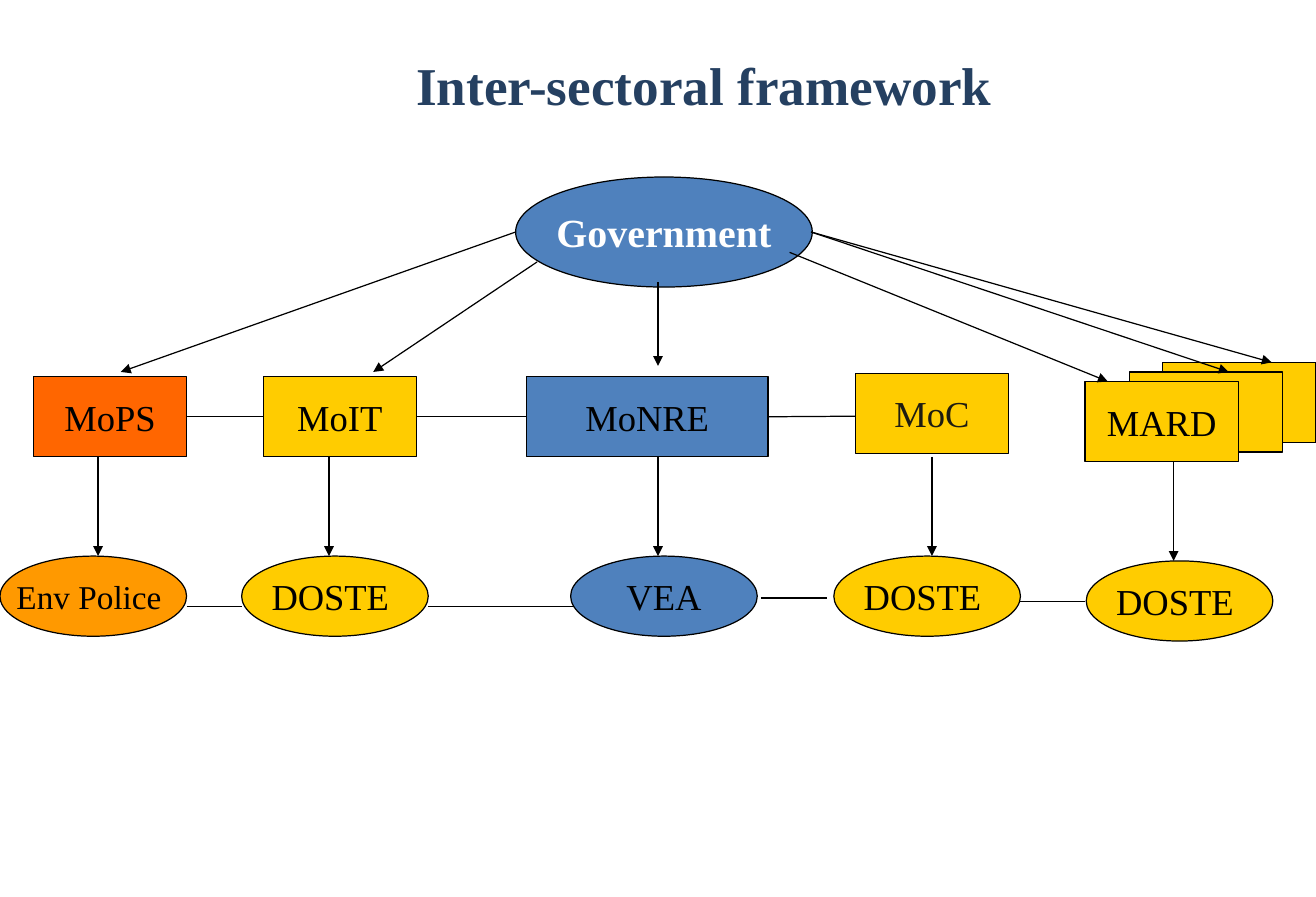
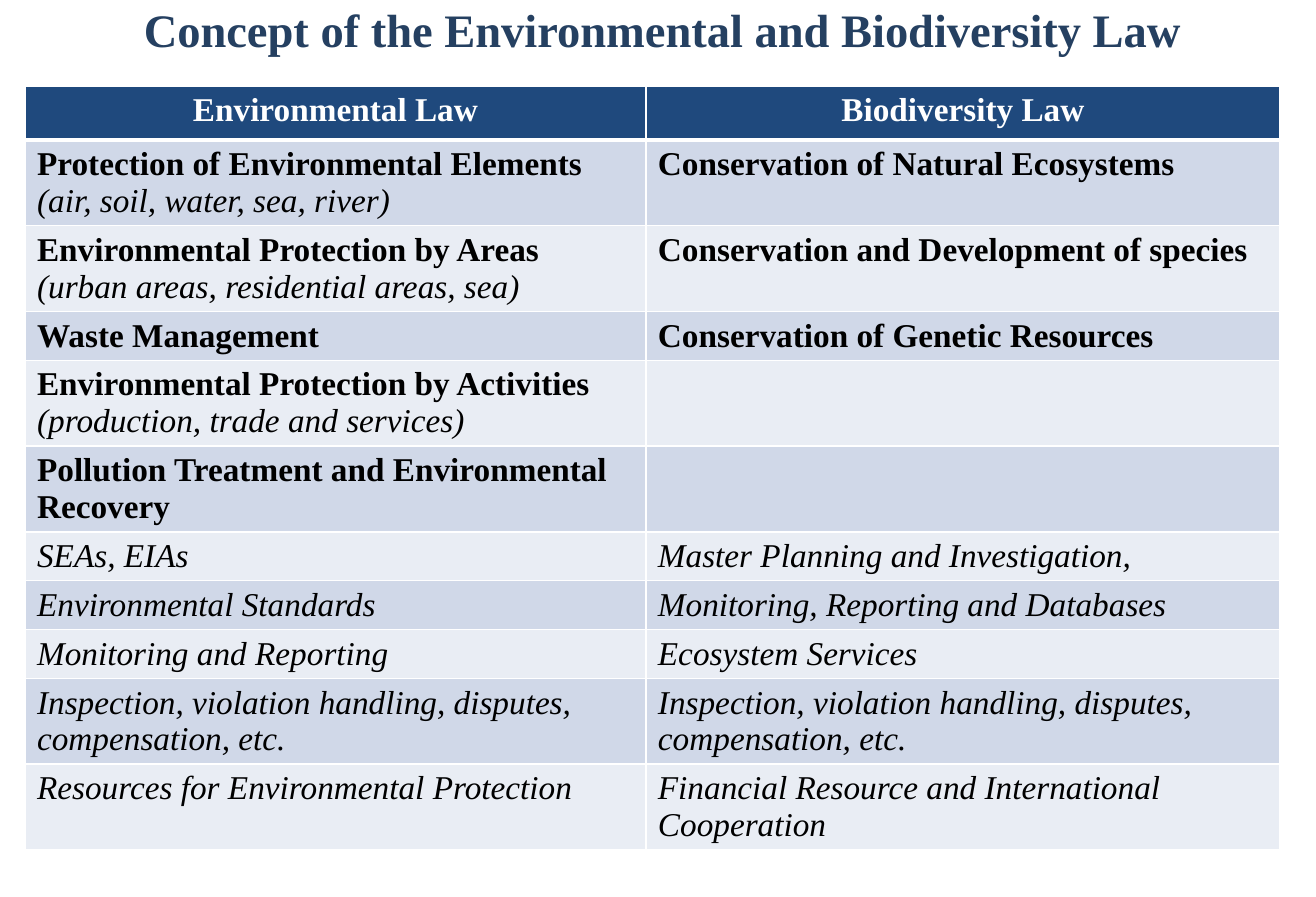
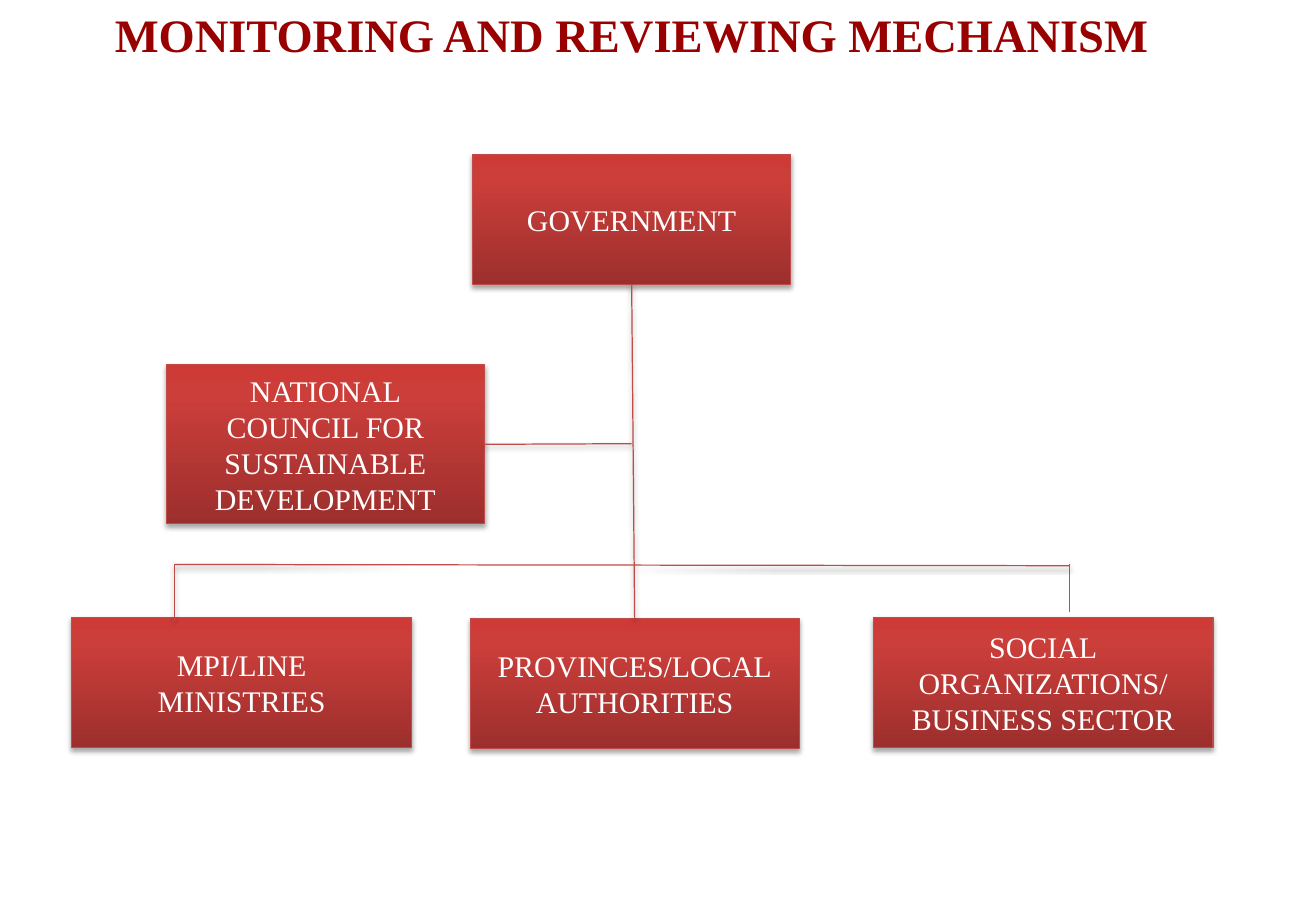
import copy
import dataclasses

import lxml.etree
import pptx
import pptx.dml.color
import pptx.enum.dml
import pptx.enum.shapes
import pptx.enum.text
import pptx.oxml.ns
import pptx.util

Inches = pptx.util.Inches
Pt = pptx.util.Pt
qn = pptx.oxml.ns.qn
Shapes = pptx.enum.shapes.MSO_SHAPE
Anchor = pptx.enum.text.MSO_ANCHOR
Align = pptx.enum.text.PP_ALIGN


@dataclasses.dataclass(frozen=True)
class Theme:
    font: str = "Times New Roman"
    black: str = "000000"
    white: str = "FFFFFF"
    navy: str = "254061"
    header: str = "1F497D"
    blue: str = "4F81BD"
    yellow: str = "FFCC00"
    amber: str = "FF9900"
    orange: str = "FF6600"
    umber: str = "1E1C11"
    maroon: str = "990000"
    red_line: str = "BF4C48"
    red_fill: tuple = ((0, "9C2F2D"), (0.8, "CB3E3A"), (1, "CE3B37"))
    bands: tuple = ("D0D8E8", "E9EDF4")
    big_title: int = 32
    title: int = 28
    root: int = 24
    node: int = 22
    cell: int = 20
    chart: int = 18
    line: float = 0.75


THEME = Theme()
RECT, OVAL = Shapes.RECTANGLE, Shapes.OVAL

MINISTRY, AGENCY = (1.28, 0.67), (1.56, 0.67)
FRAMEWORK_NODES = [
    ("Government", OVAL, (4.31, 1.48), (2.48, 0.92), THEME.blue),
    ("MoPS", RECT, (0.28, 3.15), MINISTRY, THEME.orange),
    ("MoIT", RECT, (2.2, 3.15), MINISTRY, THEME.yellow),
    ("MoNRE", RECT, (4.4, 3.15), (2.02, 0.67), THEME.blue),
    ("MoC", RECT, (7.15, 3.12), MINISTRY, THEME.yellow),
    ("", RECT, (9.72, 3.03), MINISTRY, THEME.yellow),
    ("", RECT, (9.44, 3.11), MINISTRY, THEME.yellow),
    ("MARD", RECT, (9.07, 3.19), MINISTRY, THEME.yellow),
    ("Env Police ", OVAL, (0, 4.65), AGENCY, THEME.amber),
    ("DOSTE ", OVAL, (2.02, 4.65), AGENCY, THEME.yellow),
    ("VEA", OVAL, (4.77, 4.65), AGENCY, THEME.blue),
    ("DOSTE ", OVAL, (6.97, 4.65), AGENCY, THEME.yellow),
    ("DOSTE ", OVAL, (9.08, 4.69), AGENCY, THEME.yellow),
]
NODE_STYLES = {
    "Government": (THEME.root, THEME.white, True),
    "Env Police ": (THEME.cell, THEME.black, False),
    "MoC": (THEME.node, THEME.umber, False),
}
GOVERNMENT_ARROWS = [
    ((4.31, 1.94), (1.01, 3.11)),
    ((4.49, 2.19), (3.12, 3.11)),
    ((5.5, 2.36), (5.5, 3.06)),
    ((6.6, 2.11), (9.26, 3.19)),
    ((6.78, 1.94), (10.27, 3.11)),
    ((6.78, 1.94), (10.63, 3.03)),
]
AGENCY_ARROWS = [(0.82, 3.82), (2.75, 3.82), (5.5, 3.82), (7.79, 3.82), (9.81, 3.86)]
AGENCY_DROP = 0.83
MINISTRY_LINKS = [("MoPS", "MoIT"), ("MoIT", "MoNRE"), ("MoNRE", None)]
MOC_SIDE = (7.15, 3.48)
AGENCY_LINKS = [(1.56, 2.02, 5.07), (3.58, 4.79, 5.07), (6.36, 6.91, 5), (8.53, 9.07, 5.03)]

BOLD, ITALIC = "bold", "italic"
LAW_HEADERS = ["Environmental Law", "Biodiversity Law"]
LAW_TOPICS = [
    ([[("Protection of Environmental Elements ", BOLD), ("(air, soil, water, sea, river)", ITALIC)]],
     [[("Conservation of Natural Ecosystems", BOLD)]]),
    ([[("Environmental Protection by Areas ", BOLD), ("(urban areas, residential areas, sea)", ITALIC)]],
     [[("Conservation and Development of species", BOLD)]]),
    ([[("Waste Management", BOLD)]],
     [[("Conservation of Genetic Resources", BOLD)]]),
    ([[("Environmental Protection by Activities", BOLD)], [("(production, trade and services)", ITALIC)]],
     []),
    ([[("Pollution Treatment and Environmental", BOLD)], [("Recovery", BOLD)]],
     []),
    ([[("SEAs, EIAs", ITALIC)]],
     [[("Master Planning and Investigation,", ITALIC)]]),
    ([[("Environmental Standards", ITALIC)]],
     [[("Monitoring, Reporting and Databases", ITALIC)]]),
    ([[("Monitoring and Reporting", ITALIC)]],
     [[("Ecosystem Services", ITALIC)]]),
    ([[("Inspection, violation handling, disputes, compensation, etc.", ITALIC)]],
     [[("Inspection, violation handling, disputes,", ITALIC)], [("compensation, etc.", ITALIC)]]),
    ([[("Resources for Environmental Protection", ITALIC)]],
     [[("Financial Resource and International", ITALIC)], [("Cooperation", ITALIC)]]),
]
LAW_COLUMNS = [5.19, 5.3]
HEADER_ROW, ONE_LINE, TWO_LINES = 0.45, 0.4, 0.69
ONE_LINE_TOPICS = (2, 5, 6, 7)

MECHANISM_BOXES = {
    "government": (["GOVERNMENT"], (3.95, 1.29), (2.66, 1.09)),
    "council": (["NATIONAL", "COUNCIL FOR", "SUSTAINABLE", "DEVELOPMENT"], (1.39, 3.05), (2.66, 1.33)),
    "ministries": (["MPI/LINE", "MINISTRIES"], (0.6, 5.16), (2.84, 1.09)),
    "provinces": (["PROVINCES/LOCAL", "AUTHORITIES"], (3.93, 5.17), (2.75, 1.09)),
    "society": (["SOCIAL", "ORGANIZATIONS/", "BUSINESS SECTOR"], (7.3, 5.16), (2.84, 1.09)),
}
MECHANISM_LINES = [
    ((5.29, 2.38), (5.31, 5.17), ("government", 2), ("provinces", 0), True),
    ((1.46, 4.72), (8.94, 4.73), None, None, True),
    ((1.46, 4.72), (1.46, 5.19), None, None, True),
    ((8.94, 4.72), (8.94, 5.12), None, None, False),
    ((4.07, 3.71), (5.28, 3.71), ("council", 3), None, True),
]


def rgb(code):
    return pptx.dml.color.RGBColor.from_string(code)


def add_span(para, text, size, colour, bold=False, italic=False):
    span = para.add_run()
    span.text = text
    font = span.font
    font.name, font.size = THEME.font, Pt(size)
    font.bold, font.italic = bold, italic
    font.color.rgb = rgb(colour)


def add_page(deck, title, place, size, colour, anchor):
    page = deck.slides.add_slide(deck.slide_layouts[5])
    box = page.shapes.title
    box.left, box.top, box.width, box.height = map(Inches, place)
    frame = box.text_frame
    frame.auto_size = pptx.enum.text.MSO_AUTO_SIZE.NONE
    frame.vertical_anchor = anchor
    para = frame.paragraphs[0]
    para.alignment = Align.CENTER
    add_span(para, title, size, colour, bold=True)
    return page


def add_shadow(properties):
    effects = properties.find(qn("a:effectLst"))
    shadow = lxml.etree.SubElement(effects, qn("a:outerShdw"), blurRad=str(Pt(3.1)),
                                   dist=str(Pt(1.8)), dir="5400000", rotWithShape="0")
    colour = lxml.etree.SubElement(shadow, qn("a:srgbClr"), val=THEME.black)
    lxml.etree.SubElement(colour, qn("a:alpha"), val="35000")


def add_box(page, kind, corner, size, line_colour, wrap):
    box = page.shapes.add_shape(kind, *map(Inches, corner + size))
    box.shadow.inherit = False
    box.line.color.rgb = rgb(line_colour)
    box.line.width = Pt(THEME.line)
    frame = box.text_frame
    frame.word_wrap = wrap
    frame.vertical_anchor = Anchor.MIDDLE
    frame.paragraphs[0].alignment = Align.CENTER
    return box


def add_line(page, start, end, colour=THEME.black, arrow=False, shadow=False, begin=None, finish=None):
    line = page.shapes.add_connector(pptx.enum.shapes.MSO_CONNECTOR.STRAIGHT, *map(Inches, start + end))
    line.line.color.rgb = rgb(colour)
    line.line.width = Pt(THEME.line)
    properties = line._element.spPr
    lxml.etree.SubElement(properties, qn("a:effectLst"))
    if arrow:
        lxml.etree.SubElement(properties.find(qn("a:ln")), qn("a:tailEnd"), type="triangle")
    if shadow:
        add_shadow(properties)
    if begin:
        line.begin_connect(*begin)
    if finish:
        line.end_connect(*finish)


def build_framework(deck):
    page = add_page(deck, "Inter-sectoral framework", (3.18, 0.39, 5.41, 0.64),
                    THEME.big_title, THEME.navy, Anchor.TOP)
    nodes = {}
    for name, kind, corner, size, fill in FRAMEWORK_NODES:
        box = add_box(page, kind, corner, size, THEME.black, False)
        box.fill.solid()
        box.fill.fore_color.rgb = rgb(fill)
        if name:
            style = NODE_STYLES.get(name, (THEME.node, THEME.black, False))
            add_span(box.text_frame.paragraphs[0], name, *style)
        nodes[name] = box
    for start, end in GOVERNMENT_ARROWS:
        add_line(page, start, end, arrow=True)
    for x, y in AGENCY_ARROWS:
        add_line(page, (x, y), (x, y + AGENCY_DROP), arrow=True)
    for left, right in MINISTRY_LINKS:
        add_line(page, MOC_SIDE, MOC_SIDE, begin=(nodes[left], 3),
                 finish=(nodes[right], 1) if right else None)
    for left, right, y in AGENCY_LINKS:
        add_line(page, (left, y), (right, y))


def style_cell(cell, row, fill):
    properties = cell._tc.get_or_add_tcPr()
    widths = {"lnL": 1, "lnR": 1, "lnT": 3 if row == 1 else 1, "lnB": 3 if row == 0 else 1}
    for side, width in widths.items():
        border = lxml.etree.SubElement(properties, qn("a:" + side), w=str(Pt(width)))
        paint = lxml.etree.SubElement(border, qn("a:solidFill"))
        lxml.etree.SubElement(paint, qn("a:srgbClr"), val=THEME.white)
    cell.fill.solid()
    cell.fill.fore_color.rgb = rgb(fill)


def build_laws(deck):
    page = add_page(deck, "Concept of the Environmental and Biodiversity Law", (0.48, 0, 10.11, 0.48),
                    THEME.title, THEME.navy, Anchor.MIDDLE)
    heights = [HEADER_ROW] + [ONE_LINE if topic in ONE_LINE_TOPICS else TWO_LINES
                              for topic in range(len(LAW_TOPICS))]
    table = page.shapes.add_table(len(heights), len(LAW_COLUMNS), Inches(0.21), Inches(0.72),
                                  Inches(sum(LAW_COLUMNS)), Inches(sum(heights))).table
    for column, width in zip(table.columns, LAW_COLUMNS):
        column.width = Inches(width)
    for row, height in zip(table.rows, heights):
        row.height = Inches(height)
    for column, text in enumerate(LAW_HEADERS):
        cell = table.cell(0, column)
        style_cell(cell, 0, THEME.header)
        para = cell.text_frame.paragraphs[0]
        para.alignment = Align.CENTER
        add_span(para, text, THEME.cell, THEME.white, bold=True)
    for row, topics in enumerate(LAW_TOPICS, 1):
        for column, paragraphs in enumerate(topics):
            cell = table.cell(row, column)
            style_cell(cell, row, THEME.bands[(row - 1) % 2])
            frame = cell.text_frame
            for index, spans in enumerate(paragraphs):
                para = frame.add_paragraph() if index else frame.paragraphs[0]
                for text, style in spans:
                    add_span(para, text, THEME.cell, THEME.black, style == BOLD, style == ITALIC)


def fill_red(box):
    box.fill.gradient()
    box.fill.gradient_angle = 90
    stops = box._element.spPr.find(qn("a:gradFill")).find(qn("a:gsLst"))
    stops.append(copy.deepcopy(stops[-1]))
    for stop, (position, colour) in zip(box.fill.gradient_stops, THEME.red_fill):
        stop.position = position
        stop.color.rgb = rgb(colour)


def build_mechanism(deck):
    page = add_page(deck, "MONITORING AND REVIEWING MECHANISM ", (0.34, 0, 9.97, 1.04),
                    THEME.title, THEME.maroon, Anchor.TOP)
    boxes = {}
    for name, (lines, corner, size) in MECHANISM_BOXES.items():
        box = add_box(page, RECT, corner, size, THEME.red_line, True)
        fill_red(box)
        add_shadow(box._element.spPr)
        para = box.text_frame.paragraphs[0]
        for index, text in enumerate(lines):
            if index:
                para.add_line_break()
            add_span(para, text, THEME.chart, THEME.white)
        boxes[name] = box
    for start, end, begin, finish, shadow in MECHANISM_LINES:
        joints = [(boxes[joint[0]], joint[1]) if joint else None for joint in (begin, finish)]
        add_line(page, start, end, THEME.red_line, shadow=shadow, begin=joints[0], finish=joints[1])


def main():
    deck = pptx.Presentation()
    deck.slide_width, deck.slide_height = Inches(11), Inches(7.5)
    build_framework(deck)
    build_laws(deck)
    build_mechanism(deck)
    deck.save("out.pptx")


if __name__ == "__main__":
    main()
